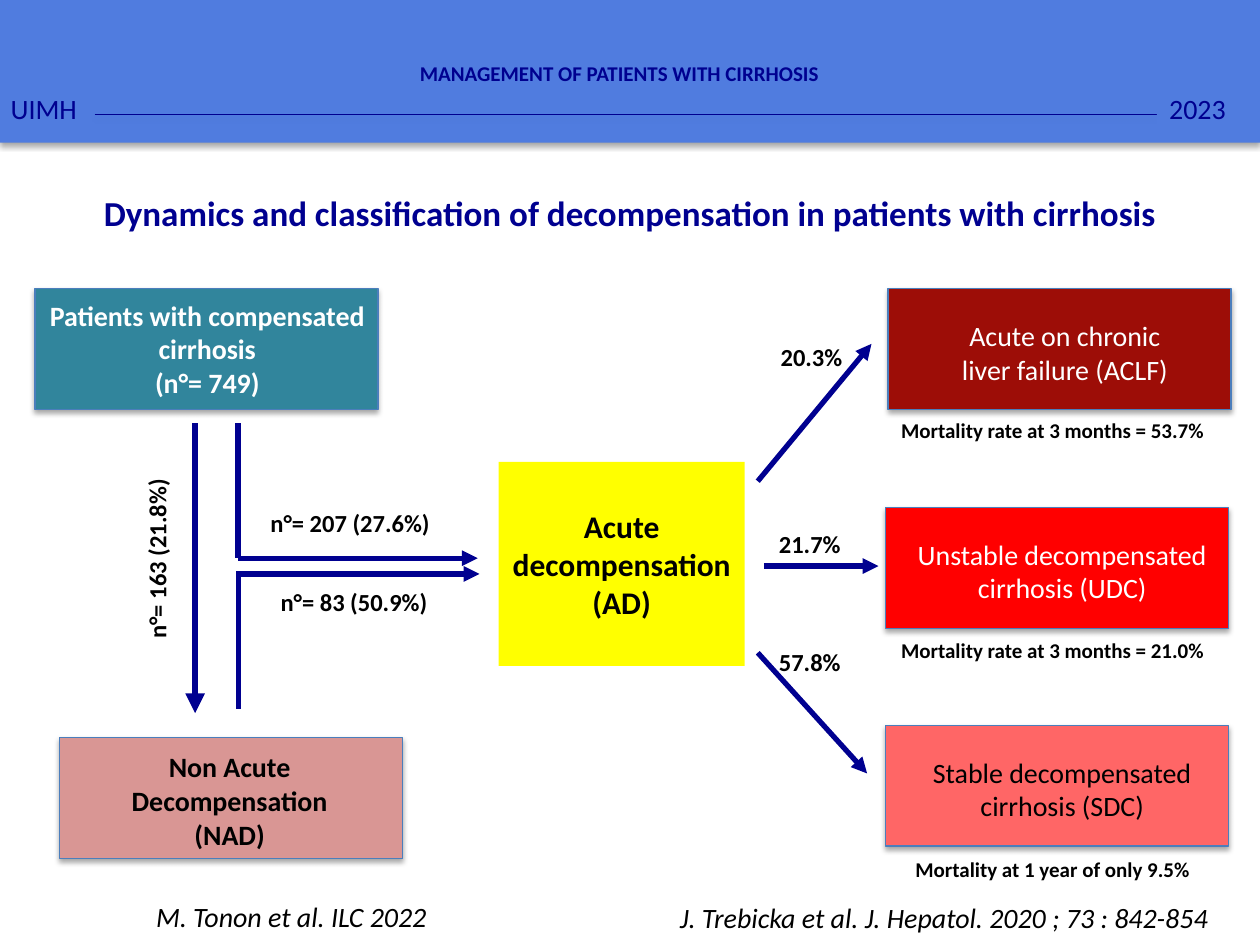
from pptx import Presentation
from pptx.dml.color import RGBColor
from pptx.enum.shapes import MSO_CONNECTOR, MSO_SHAPE
from pptx.enum.text import MSO_ANCHOR as Anchor, PP_ALIGN as Align
from pptx.oxml.ns import qn
from pptx.util import Pt
from lxml.etree import SubElement

NAVY = RGBColor(0x00, 0x00, 0x90)
HEADER_BLUE = RGBColor(0x50, 0x7C, 0xDF)
BORDER = RGBColor(0x4B, 0x7E, 0xBC)
TEAL = RGBColor(0x31, 0x85, 0x9C)
YELLOW = RGBColor(0xFF, 0xFF, 0x00)
DARK_RED = RGBColor(0x9D, 0x0D, 0x07)
RED = RGBColor(0xFF, 0x00, 0x00)
CORAL = RGBColor(0xFF, 0x66, 0x66)
PINK = RGBColor(0xD9, 0x96, 0x94)
BLACK = RGBColor(0x00, 0x00, 0x00)
WHITE = RGBColor(0xFF, 0xFF, 0xFF)


class Painter:
    """Holds the style and the current slide; lengths are in points."""
    font = "Calibri"

    def __init__(self, page):
        self.page = page

    def shadow(self, shape):
        effects = shape._element.spPr.find(qn("a:effectLst"))
        outer = SubElement(effects, qn("a:outerShdw"), blurRad=str(Pt(3.1)),
                           dist=str(Pt(1.8)), dir="5400000", rotWithShape="0")
        color = SubElement(outer, qn("a:srgbClr"), val="000000")
        SubElement(color, qn("a:alpha"), val="35000")

    def rect(self, left, top, width, height, fill, border=None, shadow=False):
        box = self.page.shapes.add_shape(
            MSO_SHAPE.RECTANGLE, Pt(left), Pt(top), Pt(width), Pt(height))
        box.shadow.inherit = False
        box.fill.solid()
        box.fill.fore_color.rgb = fill
        if border is None:
            box.line.fill.background()
        else:
            box.line.color.rgb = border
            box.line.width = Pt(0.75)
        if shadow:
            self.shadow(box)
        return box

    def label(self, box, lines, size, color=BLACK, align=Align.CENTER,
              anchor=Anchor.TOP, **styles):
        frame = box.text_frame
        frame.word_wrap = True
        frame.vertical_anchor = anchor
        frame.text = lines
        formats = {"name": self.font, "size": Pt(size), **styles}
        for para in frame.paragraphs:
            para.alignment = align
            for span in para.runs:
                span.font.color.rgb = color
                for key, value in formats.items():
                    setattr(span.font, key, value)

    def text(self, left, top, width, height, lines, size, rotation=0, **styles):
        box = self.page.shapes.add_textbox(Pt(left), Pt(top), Pt(width), Pt(height))
        box.rotation = rotation
        self.label(box, lines, size, **styles)

    def line(self, x1, y1, x2, y2, width=3, arrow=True, shadow=False):
        line = self.page.shapes.add_connector(
            MSO_CONNECTOR.STRAIGHT, Pt(x1), Pt(y1), Pt(x2), Pt(y2))
        line.line.color.rgb = NAVY
        line.line.width = Pt(width)
        if arrow:
            outline = line._element.spPr.find(qn("a:ln"))
            SubElement(outline, qn("a:tailEnd"), type="triangle")
        SubElement(line._element.spPr, qn("a:effectLst"))
        if shadow:
            self.shadow(line)


def main():
    deck = Presentation()
    deck.slide_width, deck.slide_height = Pt(720), Pt(540)
    page = deck.slides.add_slide(deck.slide_layouts[6])
    paint = Painter(page)
    box_width, box_height = 196, 69

    # Header band
    paint.rect(0, -2, 720, 83.5, HEADER_BLUE, shadow=True)
    paint.line(54, 65.5, 661, 65.5, width=0.75, arrow=False, shadow=True)
    for left, width, words in ((-1, 53, "UIMH"), (661, 59, "2023")):
        tag = paint.rect(left, 49, width, 26.5, HEADER_BLUE)
        paint.label(tag, words, 16, color=NAVY, align=Align.LEFT)
    paint.text(48, 30, 612, 23, "MANAGEMENT OF PATIENTS WITH CIRRHOSIS", 12,
               color=NAVY, bold=True, anchor=Anchor.MIDDLE)

    # Slide title
    paint.text(15, 106, 690, 32,
               "Dynamics and classification of decompensation in patients with cirrhosis",
               20, color=NAVY, bold=True)

    # Starting states
    paint.rect(20, 165, box_width, box_height, TEAL, BORDER, shadow=True)
    paint.text(-20, 167, 277, 65.5,
               "Patients with compensated\ncirrhosis\n(n°= 749)", 16,
               color=WHITE, bold=True)
    paint.rect(34, 421.5, box_width, box_height, PINK, BORDER, shadow=True)
    paint.text(52, 425, 158.5, 65.5, "Non Acute\nDecompensation\n(NAD)", 16, bold=True)

    # Acute decompensation
    acute = paint.rect(285, 264, 140.5, 116.5, YELLOW)
    acute.text_frame.margin_left = acute.text_frame.margin_right = Pt(5)
    paint.label(acute, "Acute decompensation (AD)", 18, bold=True,
                anchor=Anchor.MIDDLE)

    # Paths between the states
    paint.line(111.5, 242, 111.5, 407.5, width=3.75)
    paint.line(136, 242, 136, 319, arrow=False)
    paint.line(136, 319, 273, 319)
    paint.line(136.5, 405, 136.5, 328, arrow=False)
    paint.line(135, 328, 274, 328)
    for left, top, count, rotation, align in (
            (25, 295, "n°= 163 (21.8%)", 270, Align.LEFT),
            (147.5, 286.5, "n°= 207 (27.6%)", 0, Align.LEFT),
            (137.5, 332, "n°= 83 (50.9%)", 0, Align.CENTER)):
        paint.text(left, top, 129.6, 24.5, count, 14, rotation=rotation,
                   align=align, bold=True)

    # Outcomes: box, name, arrow, share (place and value), mortality
    outcomes = (
        (507.5, 165, DARK_RED, WHITE, "Acute on chronic\nliver failure (ACLF)",
         (433, 275, 498, 196.5), (439, 192, "20.3%"),
         (235, "Mortality rate at 3 months = 53.7%")),
        (506, 290, RED, WHITE, "Unstable decompensated\ncirrhosis (UDC)",
         (436.5, 323.5, 502, 323.5), (438, 299, "21.7%"),
         (361, "Mortality rate at 3 months = 21.0%")),
        (506, 414.5, CORAL, BLACK, "Stable decompensated\ncirrhosis (SDC)",
         (433, 373, 495.5, 442), (438, 366, "57.8%"),
         (486, "Mortality at 1 year of only 9.5%")),
    )
    for left, top, fill, color, name, arrow, share, mortality in outcomes:
        paint.rect(left, top, box_width, box_height, fill, BORDER, shadow=True)
        paint.text(left - 37.5, top + 13.5, 277, 46, name, 16, color=color)
        paint.line(*arrow)
        share_left, share_top, value = share
        paint.text(share_left, share_top, 55.5, 24.5, value, 14,
                   align=Align.LEFT, bold=True)
        note_top, note = mortality
        paint.text(499, note_top, 205, 21.5, note, 12, bold=True)

    # References
    paint.text(-29, 510.5, 391, 26.5, "M. Tonon et al. ILC 2022", 16, italic=True)
    paint.text(311, 511, 457, 26.5,
               "J. Trebicka et al. J. Hepatol. 2020 ; 73 : 842-854", 16, italic=True)

    deck.save("out.pptx")


if __name__ == "__main__":
    main()
